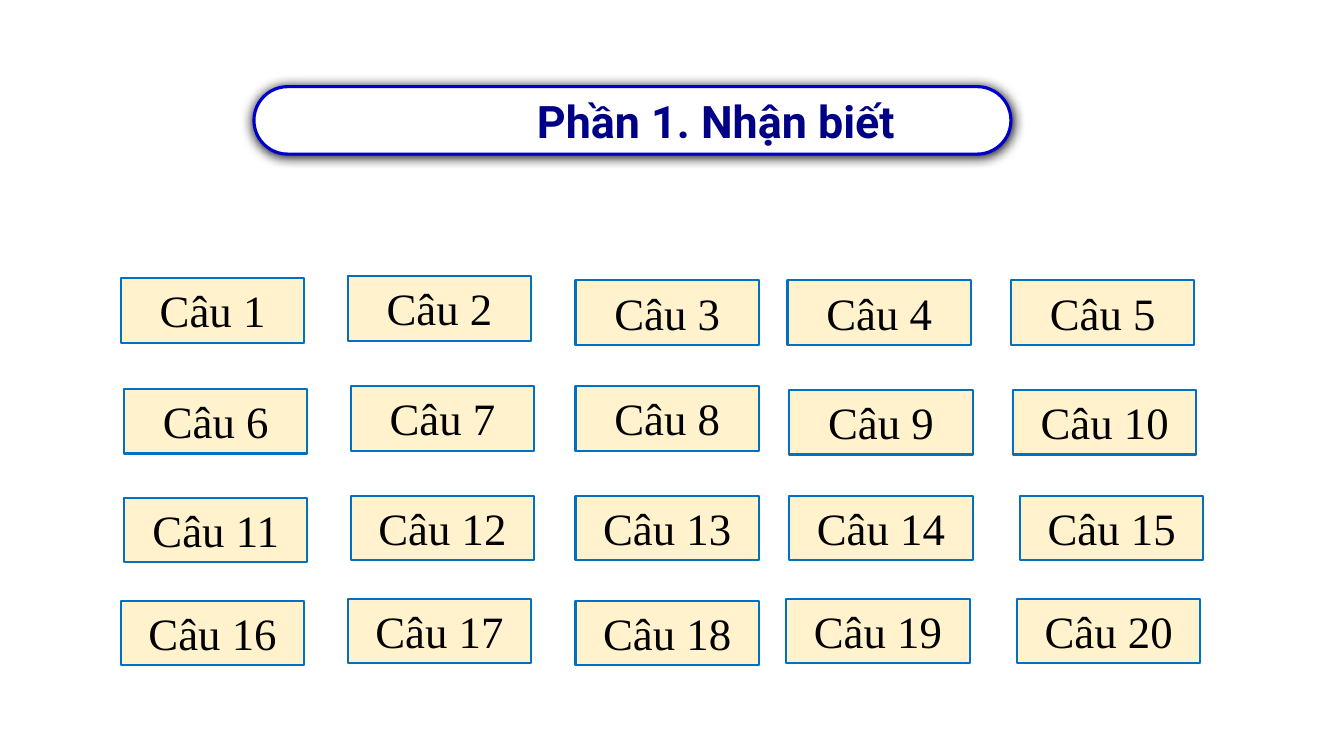
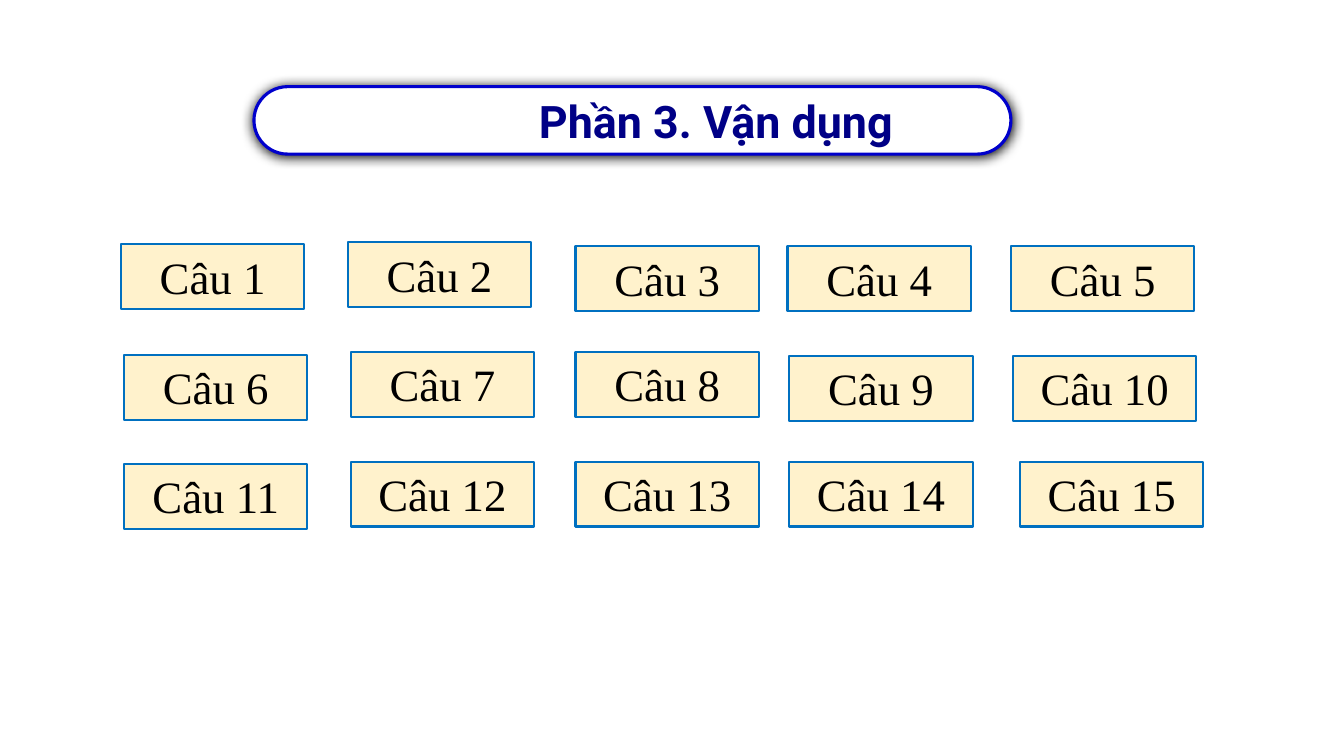
from dataclasses import dataclass

from lxml.etree import SubElement
from pptx import Presentation
from pptx.dml.color import RGBColor
from pptx.enum.shapes import MSO_SHAPE
from pptx.enum.text import MSO_ANCHOR, MSO_AUTO_SIZE, PP_ALIGN
from pptx.oxml.ns import qn
from pptx.slide import Slide
from pptx.text.text import TextFrame
from pptx.util import Pt

WHITE = RGBColor(0xFF, 0xFF, 0xFF)
BLACK = RGBColor(0x00, 0x00, 0x00)
NAVY = RGBColor(0x00, 0x00, 0x86)
BLUE = RGBColor(0x00, 0x00, 0xCC)
SKY = RGBColor(0x00, 0x70, 0xC0)
CREAM = RGBColor(0xFF, 0xF2, 0xCC)

HEAD = "Roboto"
BODY = "Times New Roman"
SIZE = Pt(32)
BAND = (Pt(181.4), Pt(61.9), Pt(540.7), Pt(48.2))
INDENT = Pt(119.4)
CARD = (Pt(131), Pt(46.1))


@dataclass(frozen=True)
class Row:
    lefts: tuple[float, ...]
    tops: tuple[float, ...]


@dataclass(frozen=True)
class Page:
    title: str
    count: int
    shift: float


ROWS = (
    Row((86.4, 248.4, 411.1, 562.5, 722.2), (198.7, 197.3, 200.2, 200.2, 200.2)),
    Row((88.6, 250.6, 411.1, 563.8, 723.6), (277.9, 275.8, 275.8, 278.6, 278.6)),
    Row((88.6, 250.6, 411.1, 563.8, 728.6), (355.7, 354.2, 354.2, 354.2, 354.2)),
    Row((86.4, 248.4, 411.1, 561.6, 726.5), (429.1, 427.7, 429.1, 427.7, 427.7)),
)
PAGES = (
    Page("Phần 1. Nhận biết", 4, 0),
    Page("Phần 3. Vận dụng", 3, -24.2),
)


def write(frame: TextFrame, text: str, face: str, color: RGBColor, bold: bool) -> None:
    frame.word_wrap = True
    line = frame.paragraphs[0]
    line.alignment = PP_ALIGN.CENTER
    run = line.add_run()
    run.text = text
    font = run.font
    font.name, font.size, font.bold = face, SIZE, bold
    font.color.rgb = color


def add_band(slide: Slide, text: str) -> None:
    band = slide.shapes.add_shape(MSO_SHAPE.ROUNDED_RECTANGLE, *BAND)
    band.adjustments[0] = 0.5
    band.fill.solid()
    band.fill.fore_color.rgb = WHITE
    band.line.color.rgb = BLUE
    band.line.width = Pt(2.25)
    band.shadow.inherit = False
    glow = band.element.spPr.find(qn("a:effectLst"))
    shade = SubElement(
        glow, qn("a:outerShdw"), blurRad=str(Pt(8.5)), dist=str(Pt(1)),
        dir="5400000", algn="ctr", rotWithShape="0",
    )
    SubElement(shade, qn("a:srgbClr"), val=str(BLACK))

    title = slide.shapes.title
    title.left, title.top, title.width, title.height = BAND
    frame = title.text_frame
    frame.auto_size = MSO_AUTO_SIZE.NONE
    frame.vertical_anchor = MSO_ANCHOR.MIDDLE
    frame.margin_left = INDENT
    frame.margin_right = frame.margin_top = frame.margin_bottom = 0
    write(frame, text, HEAD, NAVY, True)
    band.element.addnext(title.element)


def add_card(slide: Slide, text: str, left: float, top: float) -> None:
    card = slide.shapes.add_textbox(Pt(left), Pt(top), *CARD)
    card.fill.solid()
    card.fill.fore_color.rgb = CREAM
    card.line.color.rgb = SKY
    card.line.width = Pt(1.5)
    write(card.text_frame, text, BODY, BLACK, False)
    card.text_frame.auto_size = MSO_AUTO_SIZE.SHAPE_TO_FIT_TEXT


def main() -> None:
    deck = Presentation()
    deck.slide_width, deck.slide_height = Pt(960), Pt(540)
    for page in PAGES:
        slide = deck.slides.add_slide(deck.slide_layouts.get_by_name("Title Only"))
        add_band(slide, page.title)
        spots = [s for row in ROWS[:page.count] for s in zip(row.lefts, row.tops)]
        for num, (left, top) in enumerate(spots, 1):
            add_card(slide, f"Câu {num}", left, top + page.shift)
    deck.save("out.pptx")


if __name__ == "__main__":
    main()
